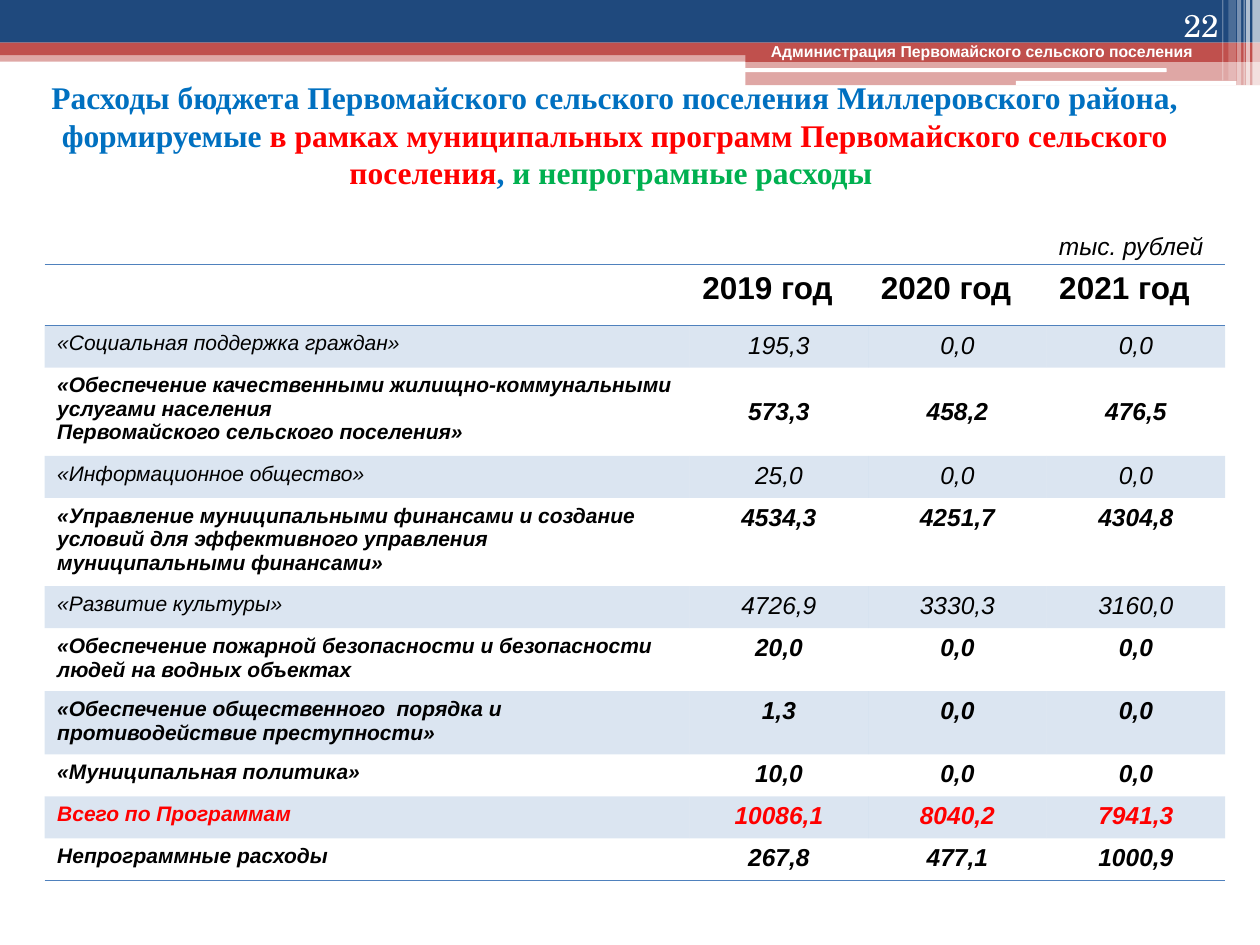
from dataclasses import dataclass

from lxml import etree
from pptx import Presentation
from pptx.dml.color import RGBColor
from pptx.enum.shapes import MSO_SHAPE
from pptx.enum.text import MSO_ANCHOR, PP_ALIGN
from pptx.oxml.ns import qn
from pptx.util import Pt

RECTANGLE, ROUNDED = MSO_SHAPE.RECTANGLE, MSO_SHAPE.ROUNDED_RECTANGLE
LEFT, CENTER, RIGHT = PP_ALIGN.LEFT, PP_ALIGN.CENTER, PP_ALIGN.RIGHT
TOP, MIDDLE, BOTTOM = MSO_ANCHOR.TOP, MSO_ANCHOR.MIDDLE, MSO_ANCHOR.BOTTOM
PLAIN_TABLE_STYLE = "{2D5ABB26-0587-4C30-8999-92F81FD0307C}"


@dataclass(frozen=True)
class Theme:
    navy: str = "1F497D"
    brick: str = "C0504D"
    steel: str = "4F81BD"
    white: str = "FFFFFF"
    black: str = "000000"
    red: str = "FF0000"
    blue: str = "0070C0"
    green: str = "00B050"
    sans: str = "Arial"
    title_font: str = "Times New Roman"
    number_font: str = "TeX Gyre Schola"
    large: int = 18
    medium: int = 14
    label: int = 12
    small: int = 9


THEME = Theme()


class SlideBuilder:
    def __init__(self, slide, theme):
        self.slide = slide
        self.theme = theme

    def paint(self, fill, color, opacity=100):
        fill.solid()
        fill.fore_color.rgb = RGBColor.from_string(color)
        if opacity < 100:
            color_element = fill._xPr.find(qn("a:solidFill"))[0]
            etree.SubElement(color_element, qn("a:alpha"), val=str(opacity * 1000))

    def style(self, run, size, color, font=None, bold=False, italic=False):
        run.font.name = font or self.theme.sans
        run.font.size = Pt(size)
        run.font.bold = bold
        run.font.italic = italic
        run.font.color.rgb = RGBColor.from_string(color)

    def band(self, left, top, width, height, color, opacity=100, kind=RECTANGLE):
        shape = self.slide.shapes.add_shape(
            kind, Pt(left), Pt(top), Pt(width), Pt(height))
        shape.shadow.inherit = False
        shape.line.fill.background()
        self.paint(shape.fill, color, opacity)

    def text(self, left, top, width, height, parts, size, font=None,
             align=LEFT, anchor=TOP, bold=False, italic=False):
        """Add one paragraph made of (text, color) parts."""
        box = self.slide.shapes.add_textbox(Pt(left), Pt(top), Pt(width), Pt(height))
        frame = box.text_frame
        frame.word_wrap = True
        frame.vertical_anchor = anchor
        paragraph = frame.paragraphs[0]
        paragraph.alignment = align
        for words, color in parts:
            run = paragraph.add_run()
            run.text = words
            self.style(run, size, color, font, bold, italic)

    def border(self, cell, sides):
        properties = cell._tc.get_or_add_tcPr()
        for position, side in enumerate(sides):
            line = etree.Element(qn(f"a:ln{side}"), w=str(Pt(1)))
            solid = etree.SubElement(line, qn("a:solidFill"))
            etree.SubElement(solid, qn("a:srgbClr"), val=self.theme.steel)
            properties.insert(position, line)

    def cell(self, cell, words, size, color, align=LEFT, anchor=TOP,
             bold=False, italic=True, striped=False):
        cell.text_frame.text = words
        cell.vertical_anchor = anchor
        for paragraph in cell.text_frame.paragraphs:
            paragraph.alignment = align
            for run in paragraph.runs:
                self.style(run, size, color, bold=bold, italic=italic)
        if striped:
            self.paint(cell.fill, self.theme.steel, 20)
        else:
            cell.fill.background()

    def table(self, left, top, widths, heights, headings, rows):
        theme = self.theme
        table = self.slide.shapes.add_table(
            len(heights), len(widths), Pt(left), Pt(top),
            Pt(sum(widths)), Pt(sum(heights))).table
        table._tbl.tblPr.find(qn("a:tableStyleId")).text = PLAIN_TABLE_STYLE
        for column, width in zip(table.columns, widths):
            column.width = Pt(width)
        for row, height in zip(table.rows, heights):
            row.height = Pt(height)

        for index, heading in enumerate(headings):
            self.cell(table.cell(0, index), heading, theme.large, theme.black,
                      bold=True, italic=False)
            self.border(table.cell(0, index), "TB")
            self.border(table.cell(len(rows), index), "B")
        for number, (label, values, bold, color, anchor) in enumerate(rows, 1):
            striped = number % 2 == 1
            self.cell(table.cell(number, 0), label, theme.label, color,
                      bold=bold, striped=striped)
            for index, value in enumerate(values.split(), 1):
                self.cell(table.cell(number, index), value, theme.medium, color,
                          CENTER, anchor, bold, striped=striped)


# label, values by year, bold, color, anchor of the values
ROWS = [
    ("«Социальная поддержка граждан»", "195,3 0,0 0,0", False, THEME.black, TOP),
    ("«Обеспечение качественными жилищно-коммунальными услугами населения\n"
     "Первомайского сельского поселения»",
     "573,3 458,2 476,5", True, THEME.black, MIDDLE),
    ("«Информационное общество»", "25,0 0,0 0,0", False, THEME.black, TOP),
    ("«Управление муниципальными финансами и создание условий для "
     "эффективного управления муниципальными финансами»",
     "4534,3 4251,7 4304,8", True, THEME.black, TOP),
    ("«Развитие культуры»", "4726,9 3330,3 3160,0", False, THEME.black, TOP),
    ("«Обеспечение пожарной безопасности и безопасности людей на водных объектах",
     "20,0 0,0 0,0", True, THEME.black, TOP),
    ("«Обеспечение общественного  порядка и противодействие преступности»",
     "1,3 0,0 0,0", True, THEME.black, TOP),
    ("«Муниципальная политика»", "10,0 0,0 0,0", True, THEME.black, TOP),
    ("Всего по Программам", "10086,1 8040,2 7941,3", True, THEME.red, TOP),
    ("Непрограммные расходы", "267,8 477,1 1000,9", True, THEME.black, TOP),
]
# Body rows start low and grow to fit their text
ROW_HEIGHTS = [35] + [12] * len(ROWS)


def main():
    presentation = Presentation()
    presentation.slide_width, presentation.slide_height = Pt(720), Pt(540)
    slide = presentation.slides.add_slide(presentation.slide_layouts[6])
    builder = SlideBuilder(slide, THEME)

    # Header bands
    builder.band(0, 28.8, 720, 6.5, THEME.brick, 50)
    builder.band(0, 0, 720, 24.4, THEME.navy)
    builder.band(0, 24.4, 720, 7.2, THEME.brick)
    builder.band(426, 28.2, 294, 7.2, THEME.brick)
    builder.band(426, 35.4, 294, 13.3, THEME.brick, 50)
    builder.band(425.5, 39, 241.2, 2.2, THEME.white, kind=ROUNDED)
    builder.band(580.5, 46.2, 126, 2.6, THEME.white, kind=ROUNDED)

    # Light stripes at the right edge: left, width, height, opacity
    for left, width, height, opacity in [
            (715.7, 4.3, 49, 65), (712, 2.2, 49, 65), (710.6, 0.7, 49, 60),
            (707, 2.2, 49, 40), (702, 4.3, 46, 20), (698.4, 0.7, 46, 30)]:
        builder.band(left, 0, width, height, THEME.white, opacity)

    # Header text, title and page number
    builder.text(433.4, 20.4, 270, 20,
                 [("Администрация Первомайского сельского поселения", THEME.white)],
                 THEME.small, bold=True)
    builder.text(0, 41, 702.7, 92, [
        ("Расходы бюджета Первомайского сельского поселения "
         "Миллеровского района, формируемые ", THEME.blue),
        ("в рамках муниципальных программ Первомайского сельского поселения",
         THEME.red),
        (", ", THEME.blue),
        ("и непрограмные расходы ", THEME.green),
    ], THEME.large, THEME.title_font, CENTER, bold=True)
    builder.text(643.7, 0, 59.8, 28.8, [("22", THEME.white)],
                 THEME.large, THEME.number_font, RIGHT, BOTTOM)

    # Budget table with its unit
    builder.table(25.5, 151, [368.6, 102, 102, 102], ROW_HEIGHTS,
                  ["", "2019 год", "2020 год", "2021 год"], ROWS)
    builder.text(598, 128.2, 102.2, 24.5, [("тыс. рублей", THEME.black)],
                 THEME.medium, italic=True)

    presentation.save("out.pptx")


if __name__ == "__main__":
    main()
